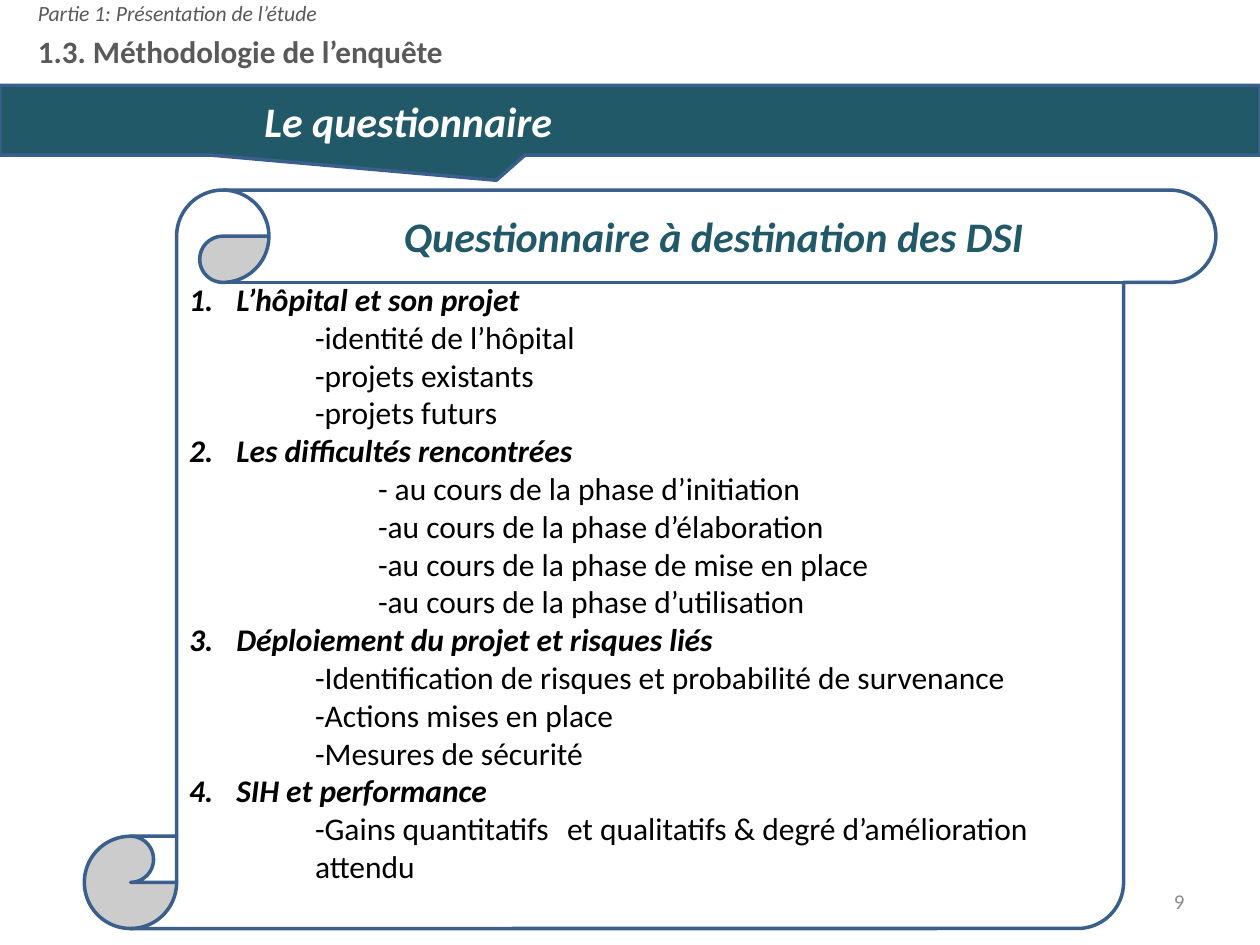
from lxml.etree import SubElement
from pptx import Presentation
from pptx.dml.color import RGBColor
from pptx.enum.shapes import MSO_SHAPE
from pptx.enum.text import MSO_ANCHOR, MSO_AUTO_SIZE, PP_ALIGN
from pptx.oxml.ns import qn
from pptx.util import Pt

FONT = "Calibri"
TEAL = RGBColor(0x21, 0x59, 0x68)
OUTLINE = RGBColor(0x3A, 0x5F, 0x8C)
HEADER_GREY = RGBColor(0x59, 0x59, 0x59)
NUMBER_GREY = RGBColor(0x8C, 0x8C, 0x8C)
WHITE = RGBColor(0xFF, 0xFF, 0xFF)
BLACK = RGBColor(0, 0, 0)

# Each section: heading, left margin of its items, items
SECTIONS = [
    ("L’hôpital et son projet", 72,
     ["-identité de l’hôpital", "-projets existants", "-projets futurs"]),
    ("Les difficultés rencontrées", 108,
     ["- au cours de la phase d’initiation",
      "-au cours de la phase d’élaboration",
      "-au cours de la phase de mise en place",
      "-au cours de la phase d’utilisation"]),
    ("Déploiement du projet et risques liés", 72,
     ["-Identification de risques et probabilité de survenance",
      "-Actions mises en place", "-Mesures de sécurité"]),
    ("SIH et performance", 72,
     ["-Gains quantitatifs\tet qualitatifs & degré d’amélioration attendu"]),
]


def add_run(paragraph, text, size, color, bold=False, italic=False):
    run = paragraph.add_run()
    run.text = text
    font = run.font
    font.name, font.size, font.bold, font.italic = FONT, Pt(size), bold, italic
    font.color.rgb = color


def set_indent(paragraph, margin, first_line=0):
    properties = paragraph._p.get_or_add_pPr()
    properties.set("marL", str(Pt(margin)))
    properties.set("indent", str(Pt(first_line)))
    return properties


def next_paragraph(frame):
    """Return the empty first paragraph, or a new one after the others."""
    first = frame.paragraphs[0]
    return frame.add_paragraph() if first.runs else first


def add_outlined_shape(slide, preset, box, fill):
    shape = slide.shapes.add_shape(preset, *map(Pt, box))
    shape.shadow.inherit = False
    shape.fill.solid()
    shape.fill.fore_color.rgb = fill
    shape.line.color.rgb = OUTLINE
    shape.line.width = Pt(2)
    shape.text_frame.vertical_anchor = MSO_ANCHOR.MIDDLE
    return shape


def add_header(slide, box):
    header = slide.shapes.title
    header.left, header.top, header.width, header.height = map(Pt, box)
    frame = header.text_frame
    frame.auto_size = MSO_AUTO_SIZE.NONE
    frame.vertical_anchor = MSO_ANCHOR.BOTTOM
    for text, size, is_heading in (
            ("Partie 1: Présentation de l’étude", 12.4, False),
            ("1.3. Méthodologie de l’enquête", 17.8, True)):
        line = next_paragraph(frame)
        line.alignment = PP_ALIGN.LEFT
        line.space_before = Pt(size * 0.2)
        add_run(line, text, size, HEADER_GREY, is_heading, not is_heading)


def add_banner(slide, box):
    banner = add_outlined_shape(slide, MSO_SHAPE.RECTANGULAR_CALLOUT, box, TEAL)
    banner.adjustments[0] = -0.106
    banner.adjustments[1] = 0.863
    caption = banner.text_frame.paragraphs[0]
    caption.alignment = PP_ALIGN.LEFT
    set_indent(caption, 144)
    add_run(caption, "Le questionnaire", 24, WHITE, True, True)


def add_questionnaire(slide, box):
    left, top, width, height = box
    scroll = add_outlined_shape(slide, MSO_SHAPE.VERTICAL_SCROLL, box, WHITE)
    frame = scroll.text_frame

    # Numbered headings with their items
    for number, (heading, margin, items) in enumerate(SECTIONS, 1):
        line = next_paragraph(frame)
        line.alignment = PP_ALIGN.LEFT
        properties = set_indent(line, 27, -27)
        SubElement(properties, qn("a:buFont"), typeface="+mj-lt")
        SubElement(properties, qn("a:buAutoNum"),
                   type="arabicPeriod", startAt=str(number))
        add_run(line, heading, 18, BLACK, True, True)
        for item in items:
            line = next_paragraph(frame)
            line.level = 2
            line.alignment = PP_ALIGN.LEFT
            set_indent(line, margin)
            add_run(line, item, 18, BLACK)

    # Heading on the rolled top edge
    heading_box = slide.shapes.add_textbox(
        Pt(left + 173.5), Pt(top + 8), Pt(372), Pt(36))
    heading_box.text_frame.word_wrap = False
    title = heading_box.text_frame.paragraphs[0]
    title.alignment = PP_ALIGN.CENTER
    add_run(title, "Questionnaire à destination des DSI", 24, TEAL, True, True)


def add_page_number(slide, box):
    frame = slide.shapes.add_textbox(*map(Pt, box)).text_frame
    frame.word_wrap = True
    frame.vertical_anchor = MSO_ANCHOR.MIDDLE
    number = frame.paragraphs[0]
    number.alignment = PP_ALIGN.RIGHT
    add_run(number, "9", 12, NUMBER_GREY)


def main():
    deck = Presentation()
    deck.slide_width, deck.slide_height = Pt(720), Pt(540)
    slide = deck.slides.add_slide(deck.slide_layouts[5])
    add_header(slide, (14.4, 0, 612, 43.2))
    add_banner(slide, (0, 48.8, 720, 39.8))
    add_page_number(slide, (516, 500.5, 168, 28.8))
    add_questionnaire(slide, (48.2, 108.6, 646.6, 422))
    deck.save("out.pptx")


if __name__ == "__main__":
    main()
